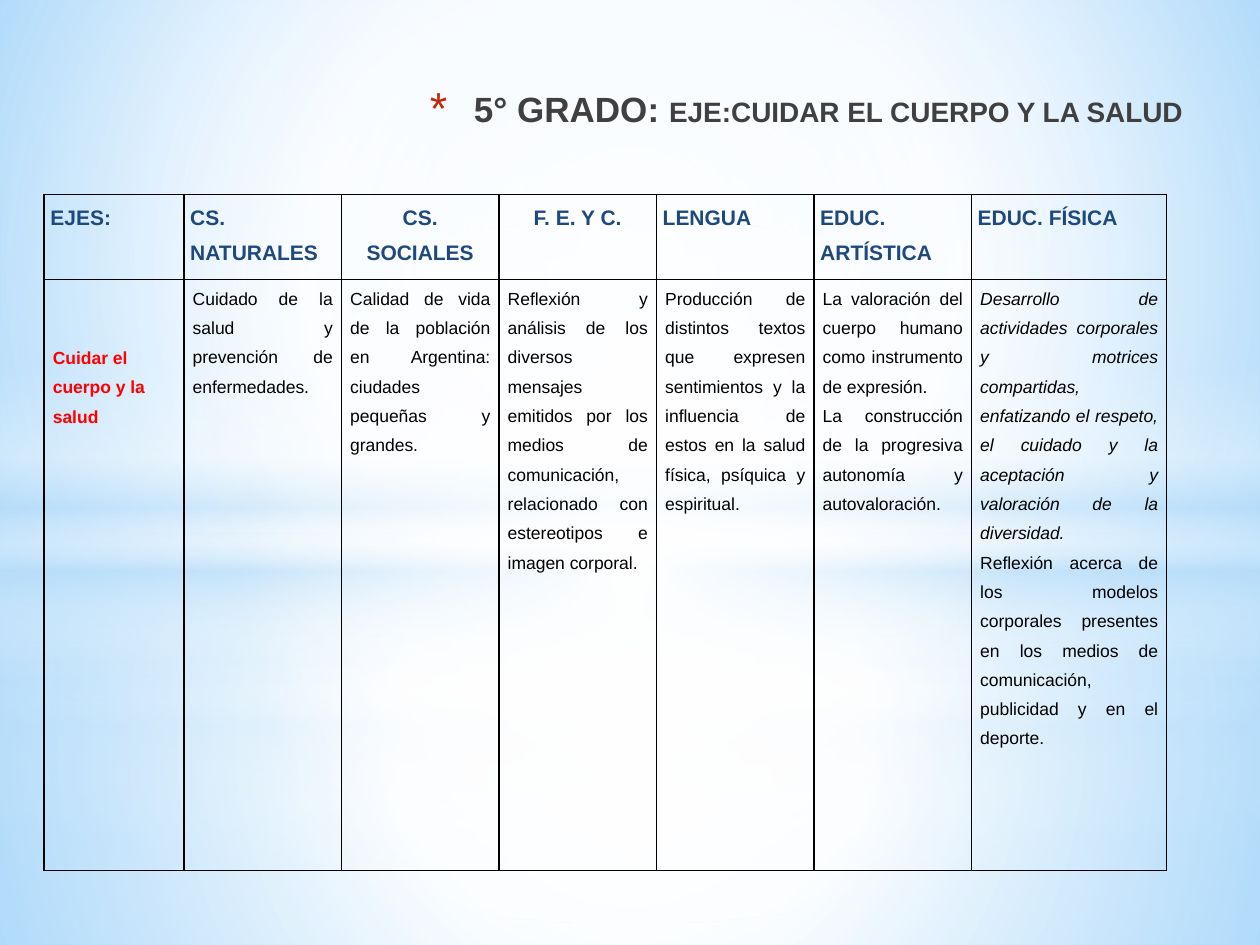
from lxml.etree import SubElement
from pptx import Presentation
from pptx.dml.color import RGBColor
from pptx.enum.shapes import MSO_SHAPE
from pptx.enum.text import MSO_ANCHOR, PP_ALIGN
from pptx.oxml import parse_xml
from pptx.oxml.ns import nsdecls, qn
from pptx.util import Inches, Pt

SLIDE_WIDTH, SLIDE_HEIGHT = Inches(10), Inches(7.5)
FONT = "Arial"
WHITE = RGBColor(0xFF, 0xFF, 0xFF)
PALE_BLUE = RGBColor(0xB4, 0xDC, 0xFA)
SKY = RGBColor(0x9E, 0xD5, 0xFF)
DEEP_SKY = RGBColor(0x5B, 0xB9, 0xFF)
BLACK = RGBColor(0, 0, 0)
GRAY = RGBColor(0x40, 0x40, 0x40)
NAVY = RGBColor(0x1F, 0x49, 0x7D)
RED = RGBColor(0xFF, 0, 0)
BRICK = RGBColor(0xC3, 0x26, 0x0C)

CENTER = (50, 50, 50, 50)
COLUMN_SHARES = [0.111] + [0.125] * 5 + [0.155]
ROW_SHARES = [0.09, 0.625]
LEFT, MIDDLE, JUSTIFY = PP_ALIGN.LEFT, PP_ALIGN.CENTER, PP_ALIGN.JUSTIFY

HEADINGS = [
    ("EJES:", LEFT),
    ("CS. NATURALES", LEFT),
    ("CS. SOCIALES", MIDDLE),
    ("F. E. Y C.", MIDDLE),
    ("LENGUA", LEFT),
    ("EDUC. ARTÍSTICA", LEFT),
    ("EDUC. FÍSICA", LEFT),
]
TOPIC = "Cuidar el cuerpo y la salud"
CONTENTS = [
    ["Cuidado de la salud y prevención de enfermedades."],
    ["Calidad de vida de la población en Argentina: ciudades pequeñas y grandes."],
    ["Reflexión y análisis de los diversos mensajes emitidos por los medios de "
     "comunicación, relacionado con estereotipos e imagen corporal."],
    ["Producción de distintos textos que expresen sentimientos y la influencia de "
     "estos en la salud física, psíquica y espiritual."],
    ["La valoración del cuerpo humano como instrumento de expresión.",
     "La construcción de la progresiva autonomía y autovaloración."],
    ["Desarrollo de actividades corporales y motrices compartidas, enfatizando el "
     "respeto, el cuidado y la aceptación y valoración de la diversidad.",
     "Reflexión acerca de los modelos corporales presentes en los medios de "
     "comunicación, publicidad y en el deporte."],
]


def wide(share):
    return round(SLIDE_WIDTH * share)


def high(share):
    return round(SLIDE_HEIGHT * share)


def gradient(stops, focus=None):
    marks = "".join(
        f'<a:gs pos="{place * 1000}"><a:srgbClr val="{color}">'
        f'<a:alpha val="{opacity * 1000}"/></a:srgbClr></a:gs>'
        for place, color, opacity in stops
    )
    if focus:
        left, top, right, bottom = (1000 * side for side in focus)
        course = (f'<a:path path="circle"><a:fillToRect l="{left}" t="{top}" '
                  f'r="{right}" b="{bottom}"/></a:path>')
    else:
        course = '<a:lin ang="5400000" scaled="0"/>'
    return parse_xml(f'<a:gradFill {nsdecls("a")} rotWithShape="1">'
                     f'<a:gsLst>{marks}</a:gsLst>{course}</a:gradFill>')


def replace_fill(parent, fill):
    solid = parent.find(qn("a:solidFill"))
    parent.replace(solid, fill)


def paint_background(page):
    page.background.fill.solid()
    stops = [(0, SKY, 100), (60, WHITE, 100), (100, DEEP_SKY, 100)]
    properties = page._element.find(".//" + qn("p:bgPr"))
    replace_fill(properties, gradient(stops, (20, 10, 20, 60)))


def add_glow(page, kind, top, height, stops, focus=None):
    shape = page.shapes.add_shape(kind, 0, high(top), SLIDE_WIDTH, high(height))
    shape.shadow.inherit = False
    shape.line.fill.background()
    shape.fill.solid()
    replace_fill(shape._element.spPr, gradient(stops, focus))


def add_backdrop(page, horizon, band_top, extra, fade):
    lower = [(0, WHITE, 91 + extra), (37, WHITE, 76 + extra), (100, PALE_BLUE, 79 + extra)]
    upper = [(0, WHITE, 89 + extra), (48, WHITE, 62 + extra), (100, PALE_BLUE, 79 + extra)]
    band = [(0, WHITE, 0), (29, WHITE, 30), (45, PALE_BLUE, 40),
            (55, WHITE, 26), (65, PALE_BLUE, 60), (100, WHITE, 0)]
    halo = [(0, WHITE, 100), (fade, WHITE, 0)]
    add_glow(page, MSO_SHAPE.RECTANGLE, horizon, 1 - horizon, lower, CENTER)
    add_glow(page, MSO_SHAPE.RECTANGLE, 0, horizon, upper, CENTER)
    add_glow(page, MSO_SHAPE.RECTANGLE, band_top, 1 / 3, band)
    add_glow(page, MSO_SHAPE.OVAL, 0.233, 0.744, halo, CENTER)


def add_run(para, text, size, color, bold=False, italic=False):
    span = para.add_run()
    span.text = text
    span.font.name = FONT
    span.font.size = Pt(size)
    span.font.color.rgb = color
    span.font.bold = bold
    span.font.italic = italic


def add_bullet(para, mark, color, percent):
    properties = para._p.get_or_add_pPr()
    properties.set("marL", str(Inches(0.35)))
    properties.set("indent", str(-Inches(0.35)))
    tint = SubElement(properties, qn("a:buClr"))
    SubElement(tint, qn("a:srgbClr"), val=str(color))
    SubElement(properties, qn("a:buSzPct"), val=str(percent * 1000))
    SubElement(properties, qn("a:buFont"), typeface=FONT)
    SubElement(properties, qn("a:buChar"), char=mark)


def add_title(page):
    box = page.shapes.add_textbox(wide(0.051), high(0.039), wide(0.898), high(0.105))
    frame = box.text_frame
    frame.word_wrap = True
    frame.vertical_anchor = MSO_ANCHOR.BOTTOM
    para = frame.paragraphs[0]
    para.alignment = PP_ALIGN.RIGHT
    add_bullet(para, "*", BRICK, 128)
    add_run(para, "5° GRADO: ", 20, GRAY, bold=True)
    add_run(para, "EJE:CUIDAR EL CUERPO Y LA SALUD", 16, GRAY, bold=True)


def style_cell(cell, side_margin, top_margin=0):
    cell.margin_left = cell.margin_right = Inches(side_margin)
    cell.margin_top, cell.margin_bottom = Inches(top_margin), 0
    properties = cell._tc.get_or_add_tcPr()
    for side in ("lnL", "lnR", "lnT", "lnB"):
        border = SubElement(properties, qn(f"a:{side}"), w=str(Pt(1)))
        paint = SubElement(border, qn("a:solidFill"))
        SubElement(paint, qn("a:srgbClr"), val=str(BLACK))
    cell.fill.background()


def write_cell(cell, texts, alignment, size, color, bold=False, italic_first=False):
    frame = cell.text_frame
    for index, text in enumerate(texts):
        para = frame.add_paragraph() if index else frame.paragraphs[0]
        para.alignment = alignment
        para.line_spacing = 1.5
        add_run(para, text, size, color, bold, italic_first and index == 0)


def add_plan(page):
    table = page.shapes.add_table(
        len(ROW_SHARES), len(COLUMN_SHARES), wide(0.035), high(0.206),
        wide(sum(COLUMN_SHARES)), high(sum(ROW_SHARES))).table
    table.first_row = table.horz_banding = False
    for column, share in zip(table.columns, COLUMN_SHARES):
        column.width = wide(share)
    for row, share in zip(table.rows, ROW_SHARES):
        row.height = high(share)
    for index, (heading, alignment) in enumerate(HEADINGS):
        cell = table.cell(0, index)
        style_cell(cell, 0.05)
        write_cell(cell, [heading], alignment, 12, NAVY, bold=True)
    topic = table.cell(1, 0)
    style_cell(topic, 0.07, top_margin=0.47)
    write_cell(topic, [TOPIC], LEFT, 10, RED, bold=True)
    for index, texts in enumerate(CONTENTS, start=1):
        cell = table.cell(1, index)
        style_cell(cell, 0.07)
        write_cell(cell, texts, JUSTIFY, 10, BLACK, italic_first=index == len(CONTENTS))


def main():
    deck = Presentation()
    deck.slide_width, deck.slide_height = SLIDE_WIDTH, SLIDE_HEIGHT
    page = deck.slides.add_slide(deck.slide_layouts[6])
    paint_background(page)
    add_backdrop(page, horizon=0.744, band_top=0.55, extra=0, fade=56)
    add_backdrop(page, horizon=0.564, band_top=0.387, extra=1, fade=54)
    add_title(page)
    add_plan(page)
    deck.save("out.pptx")


if __name__ == "__main__":
    main()
